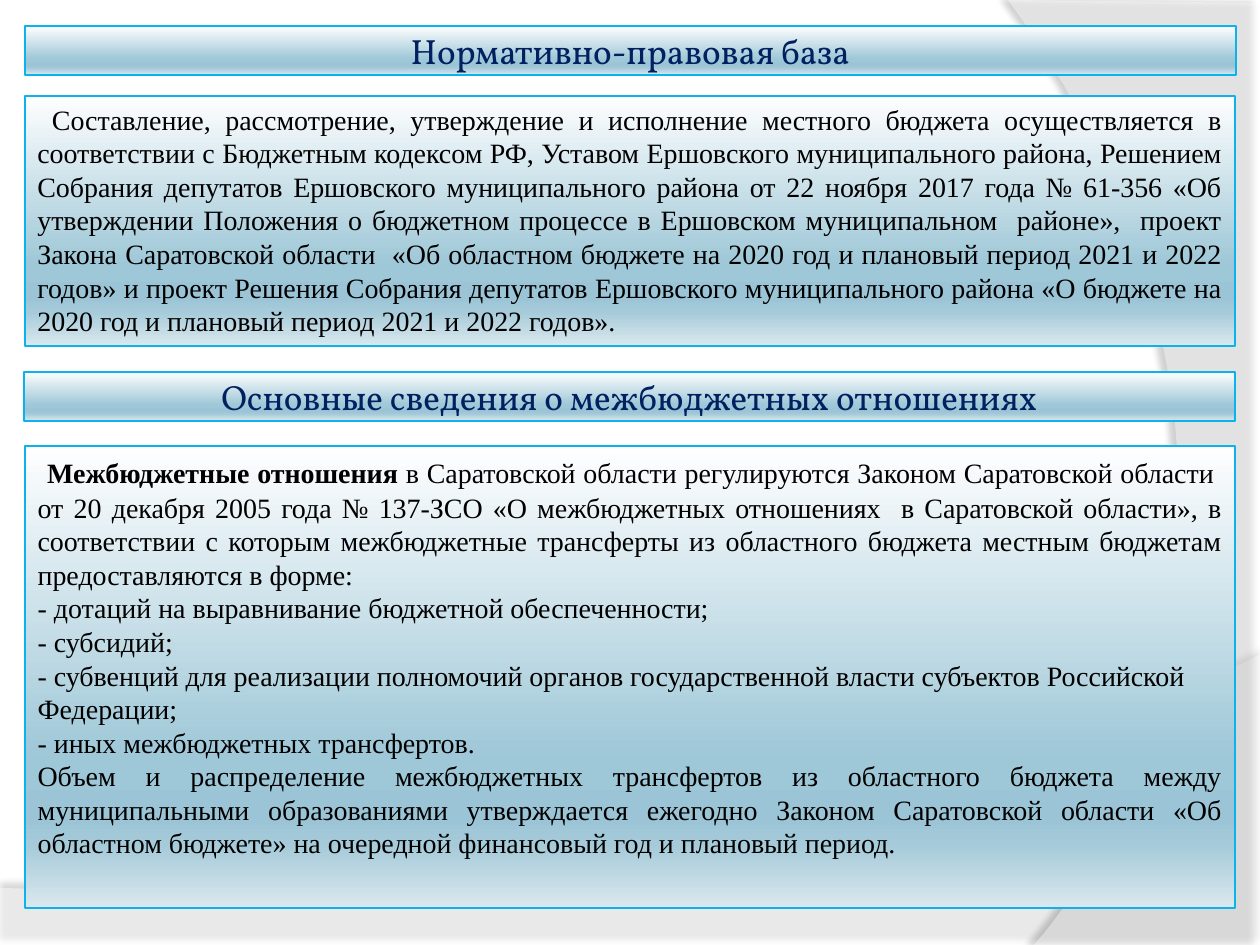
from lxml import etree
from pptx import Presentation
from pptx.dml.color import RGBColor
from pptx.enum.shapes import MSO_SHAPE
from pptx.enum.text import MSO_ANCHOR, MSO_AUTO_SIZE, PP_ALIGN
from pptx.oxml.ns import qn
from pptx.util import Emu, Pt

CENTER, LEFT, JUSTIFY = PP_ALIGN.CENTER, PP_ALIGN.LEFT, PP_ALIGN.JUSTIFY
MIDDLE, TOP = MSO_ANCHOR.MIDDLE, MSO_ANCHOR.TOP
RECT, NO_FIT = MSO_SHAPE.RECTANGLE, MSO_AUTO_SIZE.NONE

COLORS = {"white": "FFFFFF", "black": "000000", "navy": "002060", "border": "0AB3EC"}
GRADIENT = [(0, "FEFEFF"), (68, "9EC7D7"), (81, "9BC5D6"), (86, "A5CAD9"), (100, "DAE8EE")]
HEAD_FONT, BODY_FONT = "Vollkorn", "Times New Roman"
SCALE = 914400 / 126


def px(n):
    return Emu(round(n * SCALE))


def bezier(p0, p1, p2, p3, steps=40):
    """Points along a cubic curve, without its start."""
    points = []
    for i in range(1, steps + 1):
        t = i / steps
        u = 1 - t
        weights = (u ** 3, 3 * u * u * t, 3 * u * t * t, t ** 3)
        points.append(tuple(sum(w * p[k] for w, p in zip(weights, (p0, p1, p2, p3)))
                            for k in (0, 1)))
    return points


class Builder:
    def __init__(self, prs):
        self.s = prs.slides.add_slide(prs.slide_layouts[1])

    def swoosh(self, points, opacity, shadow_opacity, blur, dist, angle):
        """Translucent white background wave with a soft shadow."""
        fb = self.s.shapes.build_freeform(*points[0], scale=SCALE)
        fb.add_line_segments(points[1:], close=True)
        sp = fb.convert_to_shape()
        sp.fill.solid()
        sp.fill.fore_color.rgb = RGBColor.from_string(COLORS["white"])
        sp.line.fill.background()
        sp.shadow.inherit = False
        sp_pr = sp.element.spPr
        clr = sp_pr.find(qn("a:solidFill"))[0]
        etree.SubElement(clr, qn("a:alpha"), val=str(opacity * 1000))
        shadow = etree.SubElement(
            sp_pr.find(qn("a:effectLst")), qn("a:outerShdw"), blurRad=str(Pt(blur)),
            dist=str(Pt(dist)), dir=str(angle * 60000), algn="ctr", rotWithShape="0")
        clr = etree.SubElement(shadow, qn("a:srgbClr"), val=COLORS["black"])
        etree.SubElement(clr, qn("a:alpha"), val=str(shadow_opacity * 1000))

    def box(self, x, y, w, h, sp=None):
        """Gradient box: a new rectangle, or a placeholder brought to the front."""
        if sp is None:
            sp = self.s.shapes.add_shape(RECT, px(x), px(y), px(w), px(h))
            sp.shadow.inherit = False
        else:
            sp.left, sp.top, sp.width, sp.height = px(x), px(y), px(w), px(h)
            sp.element.getparent().append(sp.element)
        sp.fill.gradient()
        sp.fill.gradient_angle = 270
        stops = sp.element.spPr.find(qn("a:gradFill")).find(qn("a:gsLst"))
        for gs in list(stops):
            stops.remove(gs)
        for pos, color in GRADIENT:
            gs = etree.SubElement(stops, qn("a:gs"), pos=str(pos * 1000))
            etree.SubElement(gs, qn("a:srgbClr"), val=color)
        sp.line.color.rgb = RGBColor.from_string(COLORS["border"])
        sp.line.width = Pt(0.75)
        sp.text_frame.word_wrap = True
        sp.text_frame.auto_size = NO_FIT
        return sp

    def run(self, p, text, font, size, color, bold=False):
        r = p.add_run()
        r.text = text
        r.font.name, r.font.size, r.font.bold = font, Pt(size), bold
        r.font.color.rgb = RGBColor.from_string(COLORS[color])

    def heading(self, x, y, w, h, text, sp=None):
        tf = self.box(x, y, w, h, sp).text_frame
        tf.vertical_anchor = MIDDLE
        tf.margin_left = tf.margin_right = tf.margin_top = tf.margin_bottom = Pt(3.6)
        p = tf.paragraphs[0]
        p.alignment = CENTER
        self.run(p, text, HEAD_FONT, 20, "navy")

    def panel(self, x, y, w, h, paragraphs, sp=None):
        """Body text; each paragraph is (alignment, [(text, bold), ...])."""
        tf = self.box(x, y, w, h, sp).text_frame
        tf.vertical_anchor = TOP
        for i, (align, runs) in enumerate(paragraphs):
            p = tf.add_paragraph() if i else tf.paragraphs[0]
            p.alignment = align
            p.space_before = Pt(0)
            p_pr = p._p.get_or_add_pPr()
            p_pr.set("marL", "0")
            p_pr.set("indent", "0")
            etree.SubElement(p_pr, qn("a:buNone"))
            for text, bold in runs:
                font, size = (BODY_FONT, 16) if text.strip() else ("Arial", 18)
                self.run(p, text, font, size, "black", bold)


LEGAL_BASIS = (
    " Составление, рассмотрение, утверждение и исполнение местного бюджета осуществляется "
    "в соответствии с Бюджетным кодексом РФ, Уставом Ершовского муниципального района, "
    "Решением Собрания депутатов Ершовского муниципального района от 22 ноября 2017 года "
    "№ 61-356 «Об утверждении Положения о бюджетном процессе в Ершовском муниципальном  "
    "районе»,  проект Закона Саратовской области  «Об областном бюджете на 2020 год и "
    "плановый период 2021 и 2022 годов» и проект Решения Собрания депутатов Ершовского "
    "муниципального района «О бюджете на 2020 год и плановый период 2021 и 2022 годов».")
RELATIONS = (
    " в Саратовской области регулируются Законом Саратовской области  от 20 декабря 2005 "
    "года № 137-ЗСО «О межбюджетных отношениях  в Саратовской области», в соответствии с "
    "которым межбюджетные трансферты из областного бюджета местным бюджетам "
    "предоставляются в форме:")
TRANSFERS = [
    "- дотаций на выравнивание бюджетной обеспеченности;",
    "- субсидий;",
    "- субвенций для реализации полномочий органов государственной власти субъектов "
    "Российской Федерации;",
    "- иных межбюджетных трансфертов.",
]
VOLUME = (
    "Объем и распределение межбюджетных трансфертов из областного бюджета между "
    "муниципальными образованиями утверждается ежегодно Законом Саратовской области "
    "«Об областном бюджете» на очередной финансовый год и плановый период.")


def main():
    prs = Presentation()
    prs.slide_width, prs.slide_height = px(1260), px(945)
    b = Builder(prs)
    title, body = b.s.placeholders

    # Background waves: bottom, then right
    bottom = [(0, 888), (0, 946), (1260, 946), (1260, 655)]
    b.swoosh(bottom + bezier(bottom[-1], (704, 919), (493, 906), (0, 888)),
             45, 35, 4, 3.5, 270)
    right = [(1260, 3), (1260, 945), (1034, 945)]
    b.swoosh(right + bezier(right[-1], (1178, 780), (1283, 378), (1008, 0)),
             40, 45, 4, 4, 180)

    # Legal basis
    b.heading(25, 26, 1211, 49, "Нормативно-правовая база", title)
    b.panel(25, 96, 1210, 250, [(JUSTIFY, [(LEGAL_BASIS, False)])])

    # Interbudgetary relations
    b.heading(24, 372, 1211, 49, "Основные сведения о межбюджетных отношениях")
    b.panel(25, 446, 1210, 462, [
        (JUSTIFY, [(" ", False), ("Межбюджетные отношения", True), (RELATIONS, False)]),
        *[(LEFT, [(item, False)]) for item in TRANSFERS],
        (JUSTIFY, [(VOLUME, False)]),
    ], body)

    prs.save("out.pptx")


if __name__ == "__main__":
    main()
